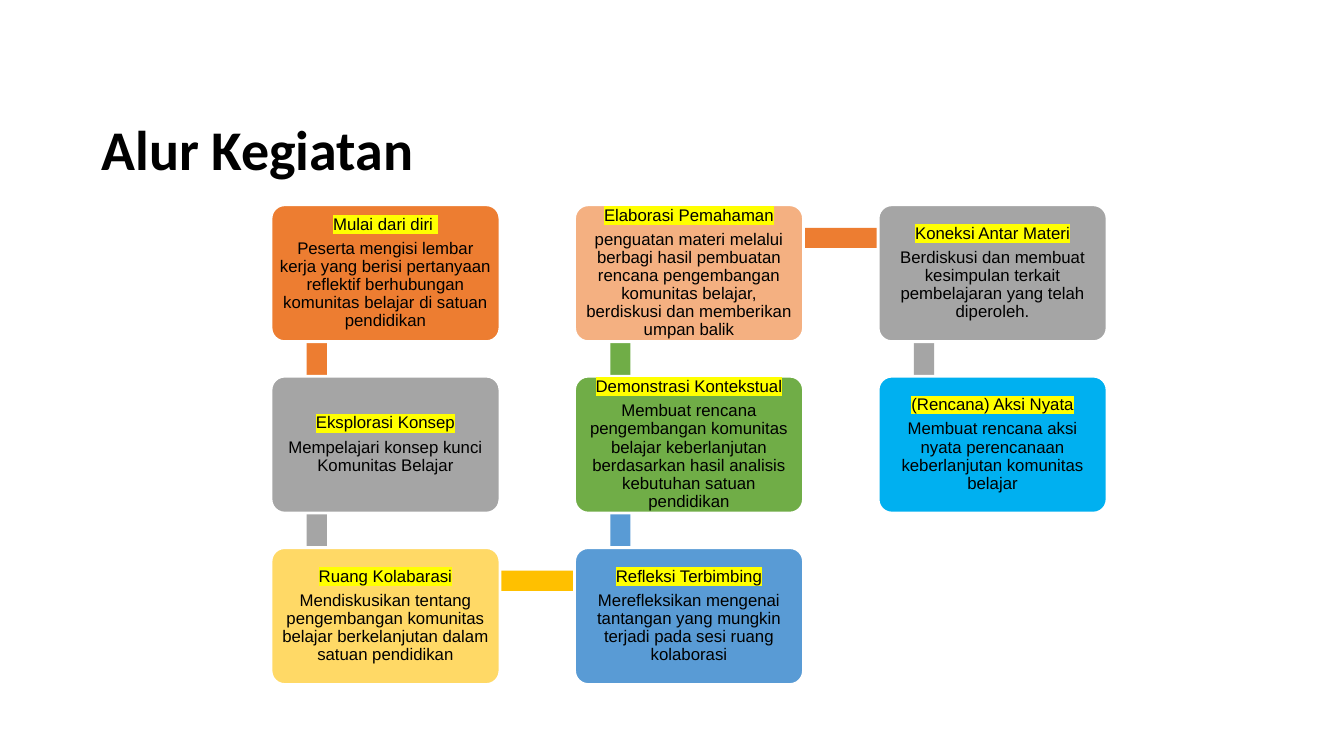
from dataclasses import dataclass
from itertools import pairwise
from lxml.etree import SubElement as SubEl
from pptx import Presentation as Deck
from pptx.dml.color import RGBColor as RGB
from pptx.enum.shapes import MSO_SHAPE as Form
from pptx.enum.text import MSO_ANCHOR as Anchor, PP_ALIGN as Align
from pptx.oxml.ns import qn
from pptx.util import Cm, Pt


@dataclass(frozen=True)
class Theme:
    ink: str = "000000"
    edge: str = "FFFFFF"
    mark: str = "FFFF00"
    orange: str = "ED7D31"
    peach: str = "F4B081"
    gray: str = "A5A5A5"
    gold: str = "FFC000"
    sand: str = "FFD966"
    blue: str = "599BD5"
    green: str = "70AD47"
    sky: str = "00B0F0"
    head: int = 40
    body: int = 12


LOOK = Theme()
LEFT, TOP = 6.83, 5.16
WIDE, HIGH = 5.77, 3.45
STEP_X, STEP_Y = 7.65, 4.32
THICK = 0.51

STEPS = [
    (0, 0, LOOK.orange, LOOK.orange, "Mulai dari diri ",
     "Peserta mengisi lembar kerja yang berisi pertanyaan reflektif "
     "berhubungan komunitas belajar di satuan pendidikan"),
    (0, 1, LOOK.gray, LOOK.gray, "Eksplorasi Konsep",
     "Mempelajari konsep kunci Komunitas Belajar"),
    (0, 2, LOOK.sand, LOOK.gold, "Ruang Kolabarasi",
     "Mendiskusikan tentang pengembangan komunitas belajar "
     "berkelanjutan dalam satuan pendidikan"),
    (1, 2, LOOK.blue, LOOK.blue, "Refleksi Terbimbing",
     "Merefleksikan mengenai tantangan yang mungkin terjadi pada sesi "
     "ruang kolaborasi"),
    (1, 1, LOOK.green, LOOK.green, "Demonstrasi Kontekstual",
     "Membuat rencana pengembangan komunitas belajar keberlanjutan "
     "berdasarkan hasil analisis kebutuhan satuan pendidikan"),
    (1, 0, LOOK.peach, LOOK.orange, "Elaborasi Pemahaman",
     "penguatan materi melalui berbagi hasil pembuatan rencana "
     "pengembangan komunitas belajar, berdiskusi dan memberikan umpan balik"),
    (2, 0, LOOK.gray, LOOK.gray, "Koneksi Antar Materi",
     "Berdiskusi dan membuat kesimpulan terkait pembelajaran yang telah "
     "diperoleh."),
    (2, 1, LOOK.sky, LOOK.sky, "(Rencana) Aksi Nyata",
     "Membuat rencana aksi nyata perencanaan keberlanjutan komunitas "
     "belajar"),
]


def apply(item, values):
    for name, value in values.items():
        setattr(item, name, value)


def frame(shape, anchor, side, rim):
    apply(shape.text_frame, {
        "word_wrap": True, "vertical_anchor": anchor,
        "margin_left": Cm(side), "margin_right": Cm(side),
        "margin_top": Cm(rim), "margin_bottom": Cm(rim)})
    return shape.text_frame


def write(para, text, size, face, align, bold=False, gap=0):
    apply(para, {"alignment": align, "line_spacing": 0.9,
                 "space_before": Pt(gap)})
    run = para.add_run()
    run.text = text
    apply(run.font, {"size": Pt(size), "name": face, "bold": bold})
    run.font.color.rgb = RGB.from_string(LOOK.ink)
    return run


def mark(run):
    props = run.font._element
    tint = SubEl(props, qn("a:highlight"))
    SubEl(tint, qn("a:srgbClr"), val=LOOK.mark)
    props.find(qn("a:latin")).addprevious(tint)


def block(slide, form, place, fill):
    shape = slide.shapes.add_shape(form, *map(Cm, place))
    shape.shadow.inherit = False
    shape.fill.solid()
    shape.fill.fore_color.rgb = RGB.from_string(fill)
    shape.line.fill.background()
    return shape


def spot(col, row):
    return LEFT + col * STEP_X, TOP + row * STEP_Y


def link(slide, start, end):
    x, y = spot(min(start[0], end[0]), min(start[1], end[1]))
    if start[0] == end[0]:
        place = x + 0.9, y + 0.85, THICK, STEP_Y
    else:
        place = x + 1.17, y + 0.58, STEP_X, THICK
    block(slide, Form.RECTANGLE, place, start[3])


def card(slide, col, row, fill, name, note):
    shape = block(slide, Form.ROUNDED_RECTANGLE,
                  (*spot(col, row), WIDE, HIGH), fill)
    shape.adjustments[0] = 0.1
    shape.line.color.rgb = RGB.from_string(LOOK.edge)
    shape.line.width = Pt(2)
    text = frame(shape, Anchor.MIDDLE, 0.12, 0.22)
    mark(write(text.paragraphs[0], name, LOOK.body, "Arial", Align.CENTER))
    write(text.add_paragraph(), note, LOOK.body, "Arial", Align.CENTER,
          gap=4.2)


def title(slide, words):
    shape = slide.shapes.add_textbox(Cm(2.31), Cm(3.07), Cm(29.21), Cm(1.65))
    text = frame(shape, Anchor.BOTTOM, 0.25, 0.13)
    write(text.paragraphs[0], words, LOOK.head, "Calibri", Align.LEFT,
          bold=True)


def main():
    deck = Deck()
    apply(deck, {"slide_width": Cm(33.87), "slide_height": Cm(19.05)})
    slide = deck.slides.add_slide(deck.slide_layouts[6])
    title(slide, "Alur Kegiatan")
    for start, end in pairwise(STEPS):
        link(slide, start, end)
    for col, row, fill, _, name, note in STEPS:
        card(slide, col, row, fill, name, note)
    deck.save("out.pptx")


if __name__ == "__main__":
    main()
